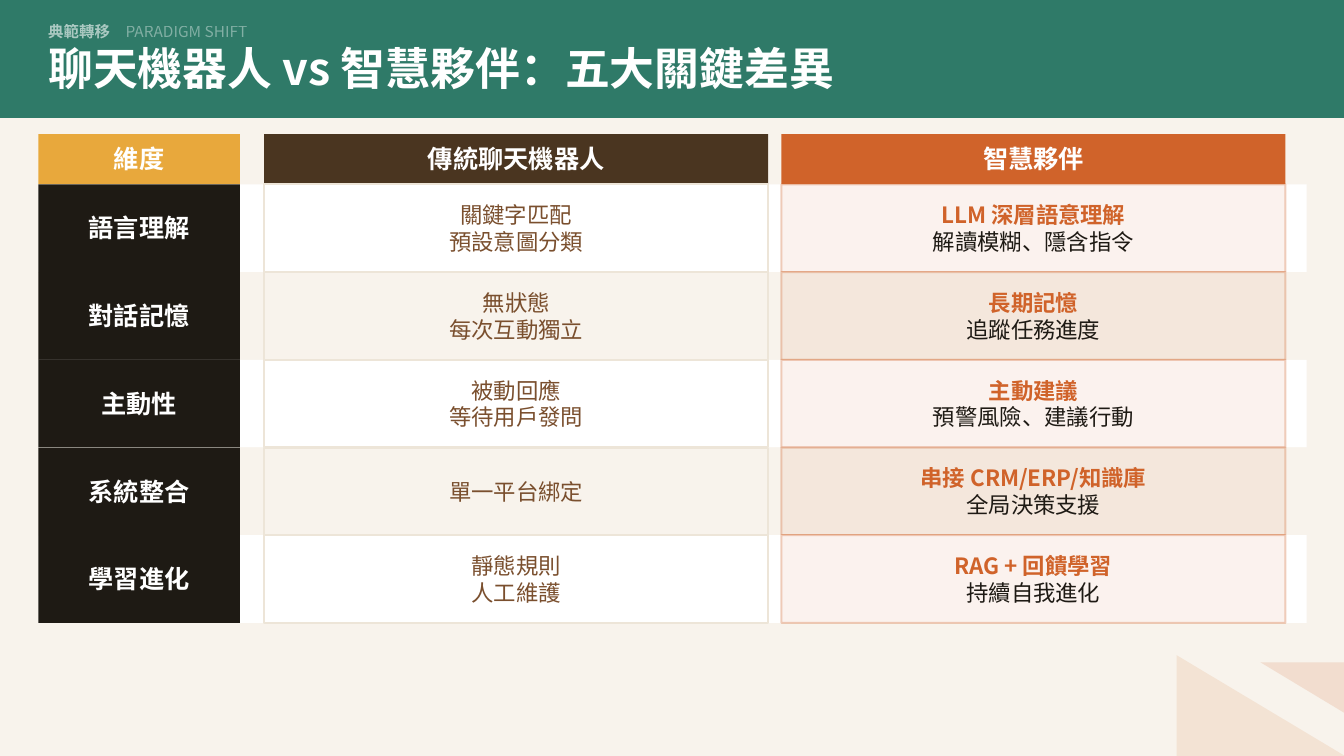
"""Build a slide that compares chatbots with intelligent partners."""
from lxml import etree
from pptx import Presentation
from pptx import util as u
from pptx.dml.color import RGBColor
from pptx.enum import shapes, text
from pptx.oxml import ns

FONT = "Noto Sans CJK SC"
GREEN, GOLD, ORANGE = "2F7A68", "E8A83C", "D0632A"
BROWN, TAN, INK = "4A3520", "7A4F2E", "1E1A14"
CREAM, SAND, WHITE = "F8F3EC", "EDE5D8", "FFFFFF"

KICKER = ("典範轉移", "PARADIGM SHIFT")
TITLE = "聊天機器人 vs 智慧夥伴：五大關鍵差異"
COLUMNS = [
    ("維度", 0.38, 2, GOLD),
    ("傳統聊天機器人", 2.62, 5, BROWN),
    ("智慧夥伴", 7.75, 5, ORANGE),
]
ROWS = [
    ("語言理解", ["關鍵字匹配", "預設意圖分類"], ["LLM 深層語意理解", "解讀模糊、隱含指令"]),
    ("對話記憶", ["無狀態", "每次互動獨立"], ["長期記憶", "追蹤任務進度"]),
    ("主動性", ["被動回應", "等待用戶發問"], ["主動建議", "預警風險、建議行動"]),
    ("系統整合", ["單一平台綁定"], ["串接 CRM/ERP/知識庫", "全局決策支援"]),
    ("學習進化", ["靜態規則", "人工維護"], ["RAG + 回饋學習", "持續自我進化"]),
]
HEAD_TOP, HEAD_HEIGHT = 1.33, 0.5
ROWS_TOP, ROW_HEIGHT, BAND_WIDTH = 1.83, 0.87, 12.58
LINE_RATIO = 1.19


def paint(fill, color, opacity=100):
    fill.solid()
    fill.fore_color.rgb = RGBColor.from_string(color)
    if opacity < 100:
        tint = fill._xPr.find(".//" + ns.qn("a:srgbClr"))
        etree.SubElement(tint, ns.qn("a:alpha"), val=str(opacity * 1000))


def add_block(box, fill=None, opacity=100, line=None, line_opacity=100,
              kind=shapes.MSO_SHAPE.RECTANGLE):
    block = slide.shapes.add_shape(kind, *map(u.Inches, box))
    block.shadow.inherit = False
    if fill:
        paint(block.fill, fill, opacity)
    else:
        block.fill.background()
    if line:
        block.line.width = u.Pt(1.42)
        paint(block.line.fill, line, line_opacity)
    else:
        block.line.fill.background()
    return block


def write(paragraph, wording, size=18, color=WHITE, opacity=100, bold=False,
          align=text.PP_ALIGN.CENTER):
    paragraph.alignment = align
    paragraph.line_spacing = u.Pt(round(size * LINE_RATIO))
    run = paragraph.add_run()
    run.text = wording
    run.font.size = u.Pt(size)
    run.font.bold = bold
    run.font.name = FONT
    paint(run.font.fill, color, opacity)
    etree.SubElement(run.font._element, ns.qn("a:ea"), typeface=FONT)


def fill_cell(block, lines, margin=0.1):
    frame = block.text_frame
    frame.word_wrap = True
    frame.vertical_anchor = text.MSO_ANCHOR.MIDDLE
    frame.margin_left = frame.margin_right = u.Inches(margin)
    for number, (wording, style) in enumerate(lines):
        paragraph = frame.add_paragraph() if number else frame.paragraphs[0]
        write(paragraph, wording, **style)


deck = Presentation()
deck.slide_width, deck.slide_height = u.Inches(13.33), u.Inches(7.5)
slide = deck.slides.add_slide(deck.slide_layouts[6])
paint(slide.background.fill, CREAM)

triangle = shapes.MSO_SHAPE.RIGHT_TRIANGLE
add_block((11.67, 6.5, 1.67, 1), "D4722A", 12, kind=triangle)
add_block((12.5, 6.57, 0.83, 0.5), ORANGE, 15, kind=triangle).rotation = 180

add_block((0, 0, 13.33, 1.17), GREEN)
heading = slide.shapes.add_textbox(*map(u.Inches, (0.38, 0.12, 12.25, 0.92))).text_frame
heading.word_wrap = True
heading.vertical_anchor = text.MSO_ANCHOR.MIDDLE
kicker, title = heading.paragraphs[0], heading.add_paragraph()
left = text.PP_ALIGN.LEFT
write(kicker, KICKER[0] + "　", size=11, opacity=60, bold=True, align=left)
write(kicker, KICKER[1], size=11, opacity=40, align=left)
write(title, TITLE, size=32, bold=True, align=left)

for label, x, width, color in COLUMNS:
    head = add_block((x, HEAD_TOP, width, HEAD_HEIGHT), color)
    fill_cell(head, [(label, dict(bold=True))])

old_style = dict(size=16, color=TAN)
new_styles = [dict(size=16, color=ORANGE, bold=True), dict(size=16, color=INK)]
for index, (dimension, chatbot, partner) in enumerate(ROWS):
    y = ROWS_TOP + index * ROW_HEIGHT
    add_block((COLUMNS[0][1], y, BAND_WIDTH, ROW_HEIGHT), CREAM if index % 2 else WHITE)
    dimension_box, chatbot_box, partner_box = [
        (x, y, width, ROW_HEIGHT) for _, x, width, _ in COLUMNS]
    fill_cell(add_block(dimension_box, INK), [(dimension, dict(bold=True))])
    fill_cell(add_block(chatbot_box, line=SAND),
              [(wording, old_style) for wording in chatbot], margin=0.17)
    fill_cell(add_block(partner_box, ORANGE, 8, ORANGE, 30),
              zip(partner, new_styles), margin=0.17)

deck.save("out.pptx")
